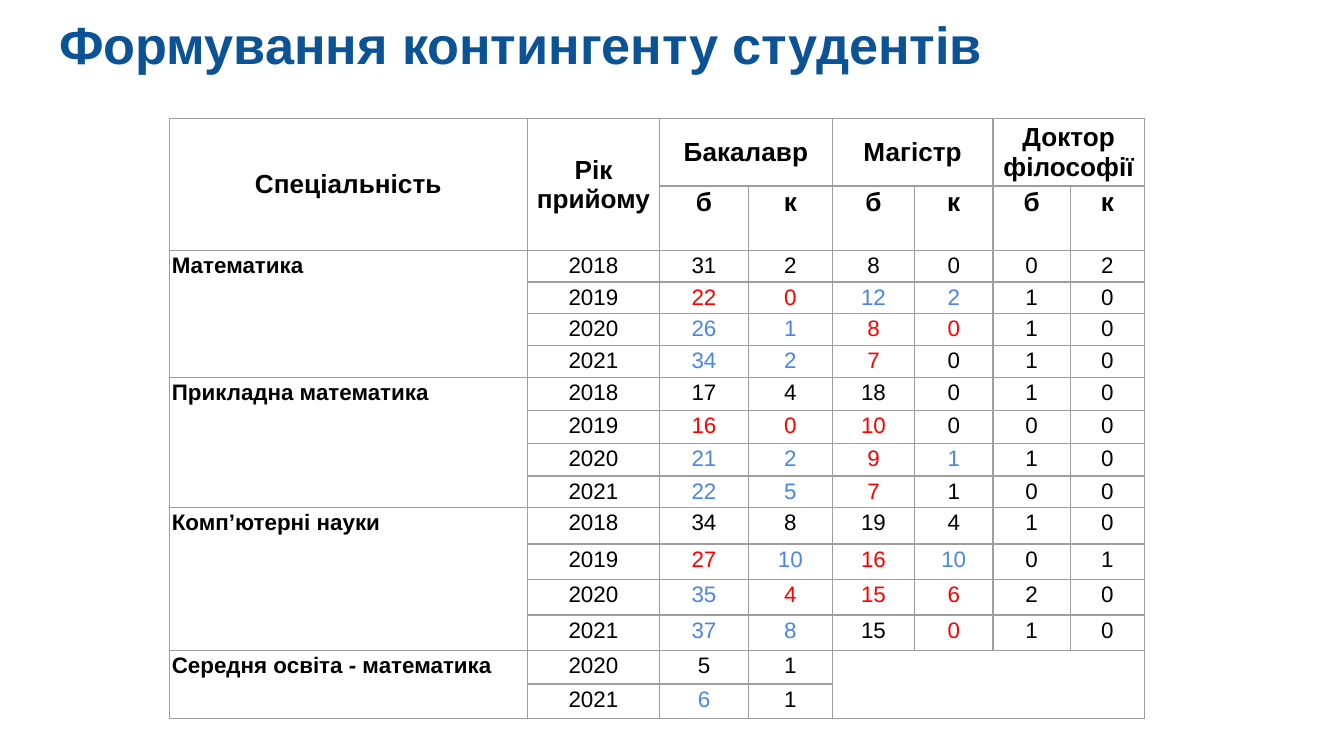
from dataclasses import dataclass

from lxml import etree
from pptx import Presentation
from pptx.dml.color import RGBColor
from pptx.enum.text import MSO_ANCHOR, MSO_AUTO_SIZE, PP_ALIGN
from pptx.oxml.ns import qn
from pptx.util import Pt

LEFT, CENTER = PP_ALIGN.LEFT, PP_ALIGN.CENTER
TOP, MIDDLE = MSO_ANCHOR.TOP, MSO_ANCHOR.MIDDLE
NO_AUTOFIT = MSO_AUTO_SIZE.NONE


@dataclass(frozen=True)
class Theme:
    font: str = "Arial"
    title: str = "0B5394"
    text: str = "000000"
    growth: str = "4A86E8"
    decline: str = "FF0000"
    border: str = "9E9E9E"
    title_size: float = 28
    header_size: float = 14
    body_size: float = 12


theme = Theme()


def style_paragraph(paragraph, size, color, bold, align):
    paragraph.alignment = align
    paragraph.font.name = theme.font
    paragraph.font.size = Pt(size)
    paragraph.font.bold = bold
    paragraph.font.color.rgb = RGBColor.from_string(color)


def write_cell(cell, text, size=theme.body_size, color=theme.text,
               bold=False, align=CENTER, anchor=TOP):
    cell.text = text
    cell.vertical_anchor = anchor
    style_paragraph(cell.text_frame.paragraphs[0], size, color, bold, align)


prs = Presentation()
prs.slide_width, prs.slide_height = Pt(720), Pt(405)
slide = prs.slides.add_slide(prs.slide_layouts[5])

heading = slide.shapes.title
heading.left, heading.top, heading.width, heading.height = Pt(24.5), Pt(-0.7), Pt(671), Pt(45.4)
frame = heading.text_frame
frame.text = "Формування контингенту студентів"
frame.auto_size = NO_AUTOFIT
frame.word_wrap = True
frame.vertical_anchor = TOP
frame.margin_left = frame.margin_right = frame.margin_top = frame.margin_bottom = Pt(7.2)
style_paragraph(frame.paragraphs[0], theme.title_size, theme.title, True, LEFT)

column_widths = [192, 70.7, 47.7, 45, 44, 42, 41.5, 39.6]
row_heights = [36, 34, 17, 17, 17, 17, 18, 17.5, 17.5, 17, 19.5, 19, 19, 19, 18, 18.5]
enrolment = table = slide.shapes.add_table(
    len(row_heights), len(column_widths),
    Pt(90.6), Pt(63.7), Pt(sum(column_widths)), Pt(sum(row_heights))).table
enrolment.first_row = False
enrolment.horz_banding = False
for column, width in zip(enrolment.columns, column_widths):
    column.width = Pt(width)
for row, height in zip(enrolment.rows, row_heights):
    row.height = Pt(height)

for cell in (cell for row in enrolment.rows for cell in row.cells):
    write_cell(cell, "")
    cell.margin_left = cell.margin_right = cell.margin_top = cell.margin_bottom = Pt(1.5)
    properties = cell._tc.get_or_add_tcPr()
    for side in ("a:lnL", "a:lnR", "a:lnT", "a:lnB"):
        line = etree.SubElement(properties, qn(side), w=str(Pt(0.75)))
        fill = etree.SubElement(line, qn("a:solidFill"))
        etree.SubElement(fill, qn("a:srgbClr"), val=theme.border)
    cell.fill.background()

headers = [
    (0, "Спеціальність", 2, 1),
    (1, "Рік прийому", 2, 1),
    (2, "Бакалавр", 1, 2),
    (4, "Магістр", 1, 2),
    (6, "Доктор філософії", 1, 2),
]
for col, label, row_span, col_span in headers:
    enrolment.cell(0, col).merge(enrolment.cell(row_span - 1, col + col_span - 1))
    write_cell(enrolment.cell(0, col), label, theme.header_size, bold=True, anchor=MIDDLE)

for col in range(2, 8):
    funding = enrolment.cell(1, col)
    write_cell(funding, "бк"[col % 2], theme.header_size, bold=True)
    funding.margin_top = Pt(7.2)
    funding.text_frame.paragraphs[0].line_spacing = 0.5

specialities = [
    ("Математика", 2018, [
        (31, 2, 8, 0, 0, 2), (22, 0, 12, 2, 1, 0),
        (26, 1, 8, 0, 1, 0), (34, 2, 7, 0, 1, 0)]),
    ("Прикладна математика", 2018, [
        (17, 4, 18, 0, 1, 0), (16, 0, 10, 0, 0, 0),
        (21, 2, 9, 1, 1, 0), (22, 5, 7, 1, 0, 0)]),
    ("Комп’ютерні науки", 2018, [
        (34, 8, 19, 4, 1, 0), (27, 10, 16, 10, 0, 1),
        (35, 4, 15, 6, 2, 0), (37, 8, 15, 0, 1, 0)]),
    ("Середня освіта - математика", 2020, [(5, 1), (6, 1)]),
]
trend_columns = 4
first = 2
for speciality, start_year, intakes in specialities:
    last = first + len(intakes) - 1
    enrolment.cell(first, 0).merge(enrolment.cell(last, 0))
    write_cell(enrolment.cell(first, 0), speciality, bold=True, align=LEFT)
    previous = intakes[0]
    for offset, intake in enumerate(intakes):
        write_cell(enrolment.cell(first + offset, 1), str(start_year + offset))
        for index, (count, before) in enumerate(zip(intake, previous)):
            color = theme.text
            if index < trend_columns and count != before:
                color = theme.growth if count > before else theme.decline
            write_cell(enrolment.cell(first + offset, 2 + index), str(count), color=color)
        previous = intake
    if len(previous) < 6:
        enrolment.cell(first, 2 + len(previous)).merge(enrolment.cell(last, 7))
    first = last + 1

prs.save("out.pptx")
